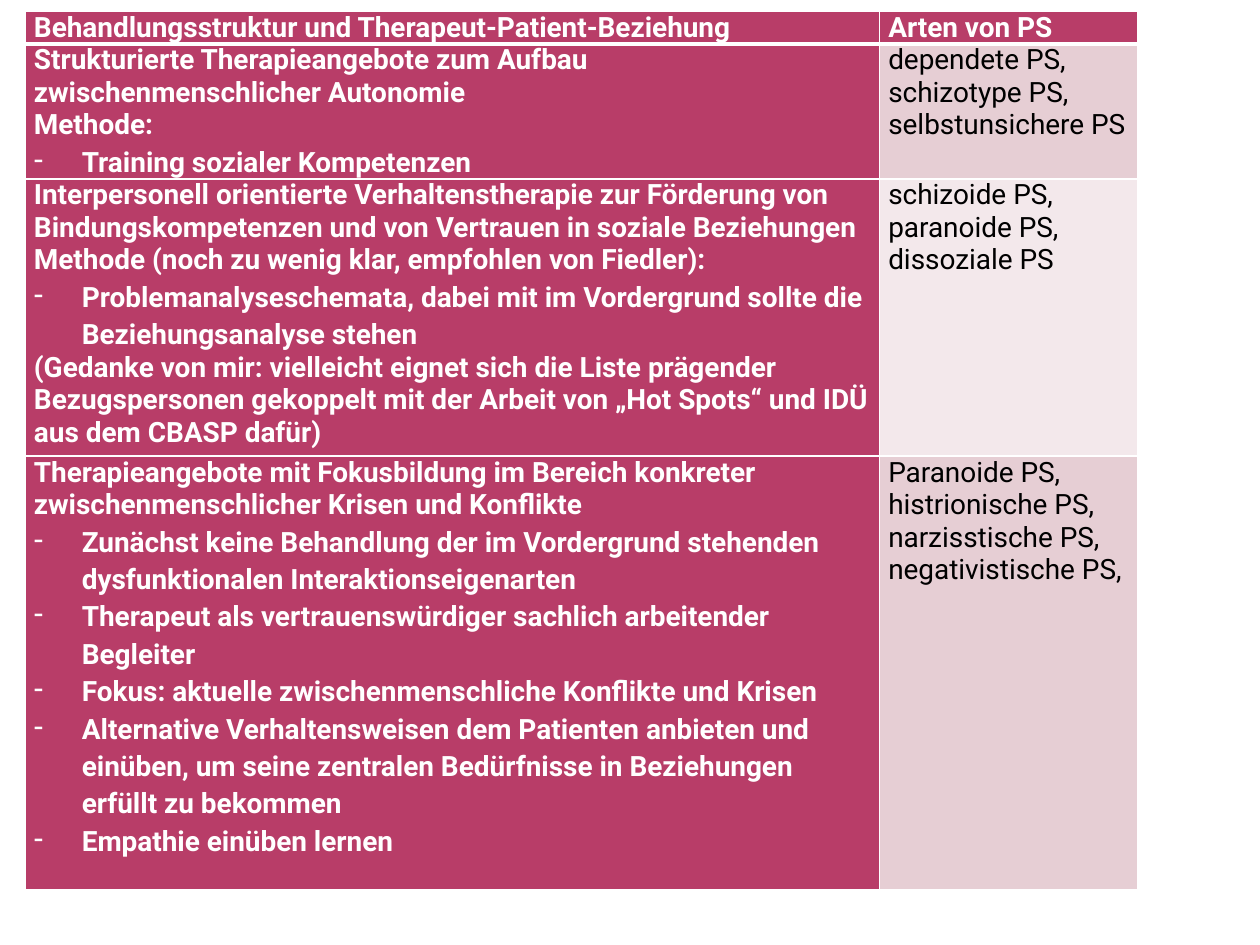
from lxml.etree import SubElement
from pptx import Presentation
from pptx.dml.color import RGBColor
from pptx.oxml.ns import qn
from pptx.util import Inches, Pt

COLORS = {"berry": "B83D68", "rose": "E6CED4", "blush": "F3E8EB", "white": "FFFFFF", "black": "000000"}
COLUMNS = [67.8, 20.5]
ROWS = [2.4, 9.7, 22, 34.4]
HEADER = ("Behandlungsstruktur und Therapeut-Patient-Beziehung", "Arten von PS")
THERAPIES = [
    (
        [
            "Strukturierte Therapieangebote zum Aufbau zwischenmenschlicher Autonomie",
            "Methode:",
            "- Training sozialer Kompetenzen",
        ],
        "dependete PS, schizotype PS, selbstunsichere PS",
    ),
    (
        [
            "Interpersonell orientierte Verhaltenstherapie zur Förderung von Bindungskompetenzen "
            "und von Vertrauen in soziale Beziehungen",
            "Methode (noch zu wenig klar, empfohlen von Fiedler):",
            "- Problemanalyseschemata, dabei mit im Vordergrund sollte die Beziehungsanalyse stehen",
            "(Gedanke von mir: vielleicht eignet sich die Liste prägender Bezugspersonen gekoppelt "
            "mit der Arbeit von „Hot Spots“ und IDÜ aus dem CBASP dafür)",
        ],
        "schizoide PS, paranoide PS, dissoziale PS",
    ),
    (
        [
            "Therapieangebote mit Fokusbildung im Bereich konkreter zwischenmenschlicher Krisen und Konflikte",
            "- Zunächst keine Behandlung der im Vordergrund stehenden dysfunktionalen Interaktionseigenarten",
            "- Therapeut als vertrauenswürdiger sachlich arbeitender Begleiter",
            "- Fokus: aktuelle zwischenmenschliche Konflikte und Krisen",
            "- Alternative Verhaltensweisen dem Patienten anbieten und einüben, um seine zentralen "
            "Bedürfnisse in Beziehungen erfüllt zu bekommen",
            "- Empathie einüben lernen",
        ],
        "Paranoide PS, histrionische PS, narzisstische PS, negativistische PS,",
    ),
]


class SlideBuilder:
    """Draw styled elements on a slide with a grid of 100 columns and 75 rows."""

    def __init__(self, deck):
        deck.slide_width, deck.slide_height = Inches(10), Inches(7.5)
        self.page = deck.slides.add_slide(deck.slide_layouts[6])
        self.column = deck.slide_width / 100
        self.row = deck.slide_height / 75
        self.font_name = "Roboto"
        self.font_size = Pt(16)

    def across(self, columns):
        return round(columns * self.column)

    def down(self, rows):
        return round(rows * self.row)

    def table(self, left, top, widths, heights):
        frame = self.page.shapes.add_table(
            len(heights), len(widths), self.across(left), self.down(top),
            self.across(sum(widths)), self.down(sum(heights)),
        )
        table = frame.table
        table.first_row = table.horz_banding = False
        for column, width in zip(table.columns, widths):
            column.width = self.across(width)
        for row, height in zip(table.rows, heights):
            row.height = self.down(height)
        return table

    def borders(self, cell, top, bottom):
        properties = cell._tc.get_or_add_tcPr()
        for side, points in (("L", 1), ("R", 1), ("T", top), ("B", bottom)):
            line = SubElement(properties, qn(f"a:ln{side}"), w=str(Pt(points)))
            SubElement(SubElement(line, qn("a:solidFill")), qn("a:srgbClr"), val=COLORS["white"])

    def cell(self, cell, lines, fill, color, bold, top=1, bottom=1):
        self.borders(cell, top, bottom)
        cell.fill.solid()
        cell.fill.fore_color.rgb = RGBColor.from_string(COLORS[fill])
        cell.margin_left = cell.margin_right = self.across(0.7)
        cell.margin_top = cell.margin_bottom = 0
        frame = cell.text_frame
        for index, line in enumerate(lines):
            para = frame.add_paragraph() if index else frame.paragraphs[0]
            self.paragraph(para, line, color, bold)

    def paragraph(self, para, line, color, bold):
        if line.startswith("- "):
            para.line_spacing = 1.15
            properties = para._p.get_or_add_pPr()
            indent = self.across(3.8)
            properties.set("marL", str(indent))
            properties.set("indent", str(-indent))
            SubElement(properties, qn("a:buChar"), char="-")
        para.text = line.removeprefix("- ")
        para.font.name = self.font_name
        para.font.size = self.font_size
        para.font.bold = bold
        para.font.color.rgb = RGBColor.from_string(COLORS[color])


def main():
    deck = Presentation()
    builder = SlideBuilder(deck)
    table = builder.table(2, 0.9, COLUMNS, ROWS)
    for column, title in enumerate(HEADER):
        builder.cell(table.cell(0, column), [title], "berry", "white", True, bottom=3)
    for row, (treatment, disorders) in enumerate(THERAPIES, start=1):
        top = 3 if row == 1 else 1
        band = "rose" if row % 2 else "blush"
        builder.cell(table.cell(row, 0), treatment, "berry", "white", True, top)
        builder.cell(table.cell(row, 1), [disorders], band, "black", False, top)
    deck.save("out.pptx")


if __name__ == "__main__":
    main()
